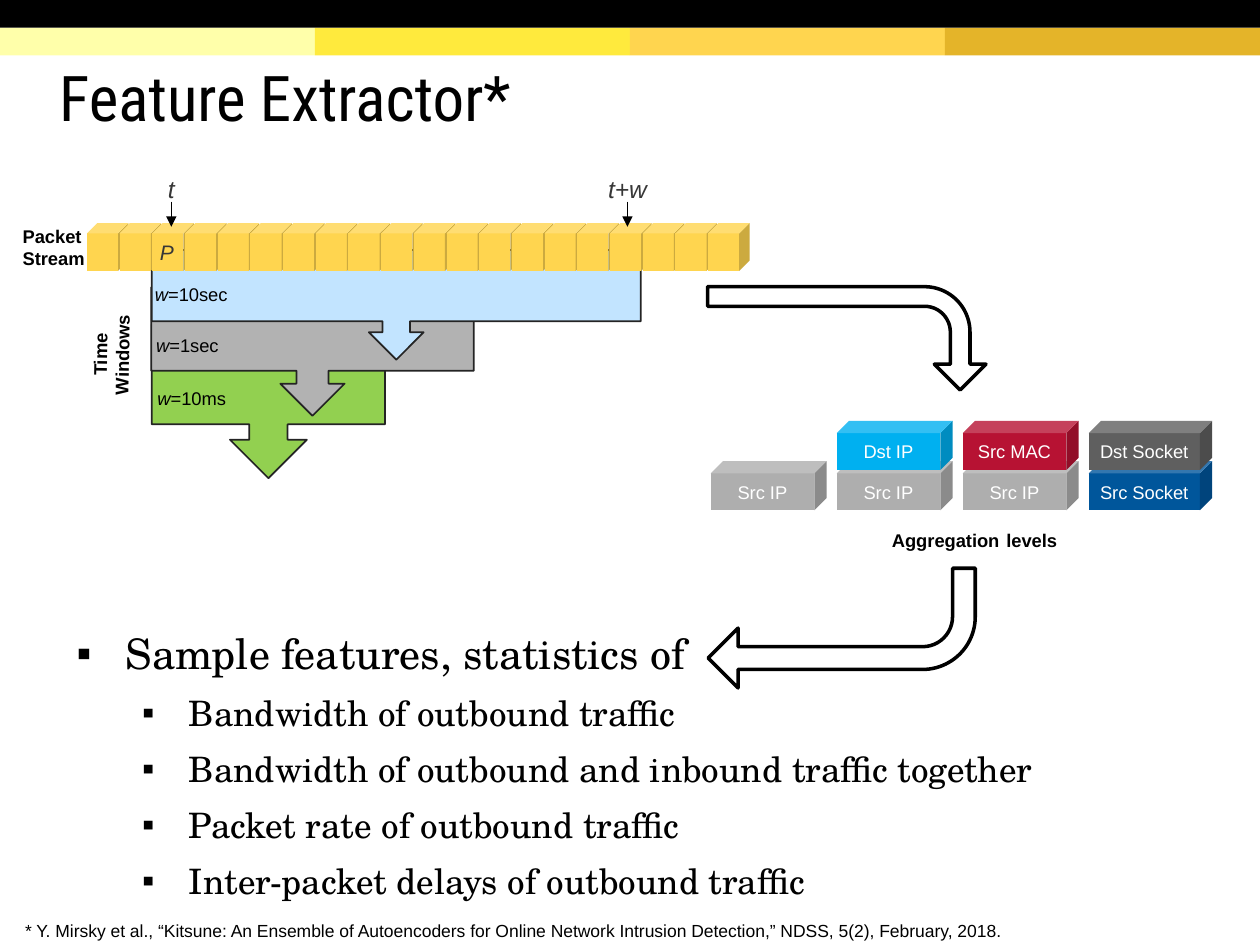
from typing import NamedTuple

from lxml.etree import SubElement
from pptx import Presentation
from pptx.dml.color import RGBColor
from pptx.enum.shapes import MSO_CONNECTOR, MSO_SHAPE
from pptx.enum.text import MSO_ANCHOR, PP_ALIGN
from pptx.oxml.ns import qn
from pptx.util import Inches, Pt

COLORS = {
    "black": "000000", "white": "FFFFFF", "ink": "373737", "outline": "242424",
    "pale": "FFFFAA", "yellow": "FFEA3D", "amber": "FFD54F", "gold": "E4B429",
    "green": "92D050", "gray": "B2B2B2", "sky": "C2E4FF",
    "silver": "AEAEAE", "cyan": "00B0F0", "crimson": "B71233",
    "navy": "00569B", "slate": "5F5F5F",
}
SMALL_INSETS = (0.06, 0.03)
WIDE_INSETS = (0.1, 0.05)


class Box(NamedTuple):
    left: float
    top: float
    width: float
    height: float


class Run(NamedTuple):
    text: str
    size: float = 10.5
    color: str = "black"
    font: str = "Arial"
    bold: bool = False
    italic: bool = False


class Window(NamedTuple):
    box: Box
    color: str
    label_box: Box
    length: str


class Level(NamedTuple):
    column: int
    row: int
    text: str
    color: str
    width: float = 0.92


class Item(NamedTuple):
    text: str
    level: int
    size: float
    indent: float
    hanging: float


BANDS = ["pale", "yellow", "amber", "gold"]
WINDOWS = [
    Window(Box(1.52, 2.26, 1.22, 1.85), "green", Box(1.19, 3.04, 0.8, 0.24), "10ms"),
    Window(Box(1.97, 1.51, 1.02, 2.56), "gray", Box(1.18, 2.62, 0.85, 0.24), "1sec"),
    Window(Box(2.71, 0.48, 0.87, 3.88), "sky", Box(1.17, 2.22, 0.83, 0.24), "10sec"),
]
LEVELS = [
    Level(0, 0, "Src IP", "silver"),
    Level(1, 0, "Src IP", "silver"),
    Level(1, 1, "Dst IP", "cyan"),
    Level(2, 0, "Src IP", "silver"),
    Level(2, 1, "Src MAC", "crimson"),
    Level(3, 0, "Src Socket", "navy", 0.98),
    Level(3, 1, "Dst Socket", "slate", 0.98),
]
FEATURES = [Item("Sample features, statistics of", 0, 24, 0.5, -0.39)] + [
    Item(text, 1, 20, 1, -0.37)
    for text in (
        "Bandwidth of outbound traffic",
        "Bandwidth of outbound and inbound traffic together",
        "Packet rate of outbound traffic",
        "Inter-packet delays of outbound traffic",
    )
]
PACKETS = 20
MARKED_PACKET = 2


def rgb(name: str) -> RGBColor:
    return RGBColor.from_string(COLORS[name])


def add_runs(p, runs: list[Run]) -> None:
    for run in runs:
        r = p.add_run()
        r.text = run.text
        formats = {"name": run.font, "size": Pt(run.size),
                   "bold": run.bold, "italic": run.italic}
        for key, value in formats.items():
            setattr(r.font, key, value)
        r.font.color.rgb = rgb(run.color)


def set_frame(tf, insets: tuple, anchor=MSO_ANCHOR.TOP, wrap: bool = True) -> None:
    x, y = map(Inches, insets)
    formats = {"margin_left": x, "margin_right": x, "margin_top": y,
               "margin_bottom": y, "vertical_anchor": anchor, "word_wrap": wrap}
    for key, value in formats.items():
        setattr(tf, key, value)


def add_shape(s, kind, box: Box, fill: str, line: str = "", weight: float = 1,
              rotation: float = 0):
    sp = s.shapes.add_shape(kind, *map(Inches, box))
    sp.shadow.inherit = False
    sp.rotation = rotation
    sp.fill.solid()
    sp.fill.fore_color.rgb = rgb(fill)
    if line:
        sp.line.color.rgb = rgb(line)
        sp.line.width = Pt(weight)
    else:
        sp.line.fill.background()
    return sp


def add_cube(s, box: Box, fill: str, run: Run | None = None,
             align=PP_ALIGN.CENTER) -> None:
    sp = add_shape(s, MSO_SHAPE.CUBE, box, fill)
    if run:
        set_frame(sp.text_frame, SMALL_INSETS, MSO_ANCHOR.MIDDLE)
        p = sp.text_frame.paragraphs[0]
        p.alignment = align
        add_runs(p, [run])


def add_text(s, box: Box, lines: list[list[Run]], insets: tuple = SMALL_INSETS,
             align=PP_ALIGN.LEFT, wrap: bool = True, rotation: float = 0):
    sp = s.shapes.add_textbox(*map(Inches, box))
    sp.rotation = rotation
    tf = sp.text_frame
    set_frame(tf, insets, wrap=wrap)
    for i, runs in enumerate(lines):
        p = tf.add_paragraph() if i else tf.paragraphs[0]
        p.alignment = align
        add_runs(p, runs)
    return sp


def add_time_mark(s, x: float, label: str, width: float) -> None:
    """Label a moment above the packet stream and point down at it."""
    add_text(s, Box(x - width / 2, 1.33, width, 0.34),
             [[Run(label, 14, "ink", italic=True)]], WIDE_INSETS,
             PP_ALIGN.CENTER, wrap=False)
    line = s.shapes.add_connector(MSO_CONNECTOR.STRAIGHT, Inches(x), Inches(1.6),
                                  Inches(x), Inches(1.8))
    line.line.color.rgb = rgb("black")
    line.line.width = Pt(0.75)
    SubElement(line.line._get_or_add_ln(), qn("a:tailEnd"), type="triangle")
    SubElement(line._element.spPr, qn("a:effectLst"))


def add_bent_arrow(s, box: Box, rotation: float) -> None:
    sp = add_shape(s, MSO_SHAPE.BENT_ARROW, box, "white", "black", 2, rotation)
    for i, value in enumerate((0.19, 0.25, 0.25, 0.44)):
        sp.adjustments[i] = value


def add_features(s) -> None:
    lines = [[Run(item.text, item.size, font="TeX Gyre Schola")] for item in FEATURES]
    sp = add_text(s, Box(0.4, 4.93, 9.21, 2.3), lines, WIDE_INSETS)
    for i, (p, item) in enumerate(zip(sp.text_frame.paragraphs, FEATURES)):
        p.level = item.level
        p.space_before = Pt(8 if i else 0)
        pPr = p._p.get_or_add_pPr()
        pPr.set("marL", str(Inches(item.indent)))
        pPr.set("indent", str(Inches(item.hanging)))
        SubElement(SubElement(pPr, qn("a:buClr")), qn("a:srgbClr"), val=COLORS["black"])
        SubElement(pPr, qn("a:buFont"), typeface="Arial")
        SubElement(pPr, qn("a:buChar"), char="▪")


def main() -> None:
    prs = Presentation()
    prs.slide_width, prs.slide_height = Inches(10), Inches(7.5)
    s = prs.slides.add_slide(prs.slide_layouts[6])

    for i, color in enumerate(BANDS):
        add_shape(s, MSO_SHAPE.RECTANGLE, Box(2.5 * i, 0.22, 2.5, 0.22), color)
    add_shape(s, MSO_SHAPE.RECTANGLE, Box(0, 0, 10, 0.22), "black")
    title = add_text(s, Box(0.39, 0.52, 8.63, 1.18),
                     [[Run("Feature Extractor*", 36, font="Roboto Condensed")]],
                     (0.08, 0.04))
    title.text_frame.paragraphs[0].line_spacing = 0.85
    add_features(s)

    for window in WINDOWS:
        add_shape(s, MSO_SHAPE.RIGHT_ARROW_CALLOUT, window.box, window.color,
                  "outline", rotation=90)
    pitch = (5.62 - 0.69) / (PACKETS - 1)
    for i in range(PACKETS):
        run = Run("P", 12, "ink", italic=True) if i == MARKED_PACKET else None
        add_cube(s, Box(0.69 + pitch * i, 1.77, 0.33, 0.38), "amber", run, PP_ALIGN.LEFT)
    for window in WINDOWS:
        add_text(s, window.label_box, [[Run("w", italic=True), Run(f"={window.length}")]])
    add_text(s, Box(0.23, 2.61, 1.3, 0.41),
             [[Run("Time", bold=True)], [Run("Windows", bold=True)]],
             align=PP_ALIGN.CENTER, rotation=271)
    add_text(s, Box(0.12, 1.76, 0.79, 0.41), [[Run("Packet Stream", bold=True)]])
    add_time_mark(s, 1.36, "t", 0.26)
    add_time_mark(s, 4.98, "t+w", 0.51)

    for level in LEVELS:
        box = Box(5.64 + level.column, 3.66 - 0.32 * level.row, level.width, 0.39)
        add_cube(s, box, level.color, Run(level.text, color="white"))
    add_text(s, Box(6.97, 4.1, 1.53, 0.34),
             [[Run("Aggregation", bold=True), Run(" ", 14, bold=True, italic=True),
               Run("levels", bold=True)]],
             WIDE_INSETS, PP_ALIGN.CENTER, wrap=False)
    add_bent_arrow(s, Box(6.31, 1.58, 0.82, 2.21), 90)
    add_bent_arrow(s, Box(5.62, 4.51, 2.12, 0.95), 180)
    add_text(s, Box(0.1, 7.25, 9.79, 0.28),
             [[Run("* Y. Mirsky et al., “Kitsune: An Ensemble of Autoencoders for Online "
                   "Network Intrusion Detection,” NDSS, 5(2), February, 2018.", 10)]],
             WIDE_INSETS)
    prs.save("out.pptx")


if __name__ == "__main__":
    main()
